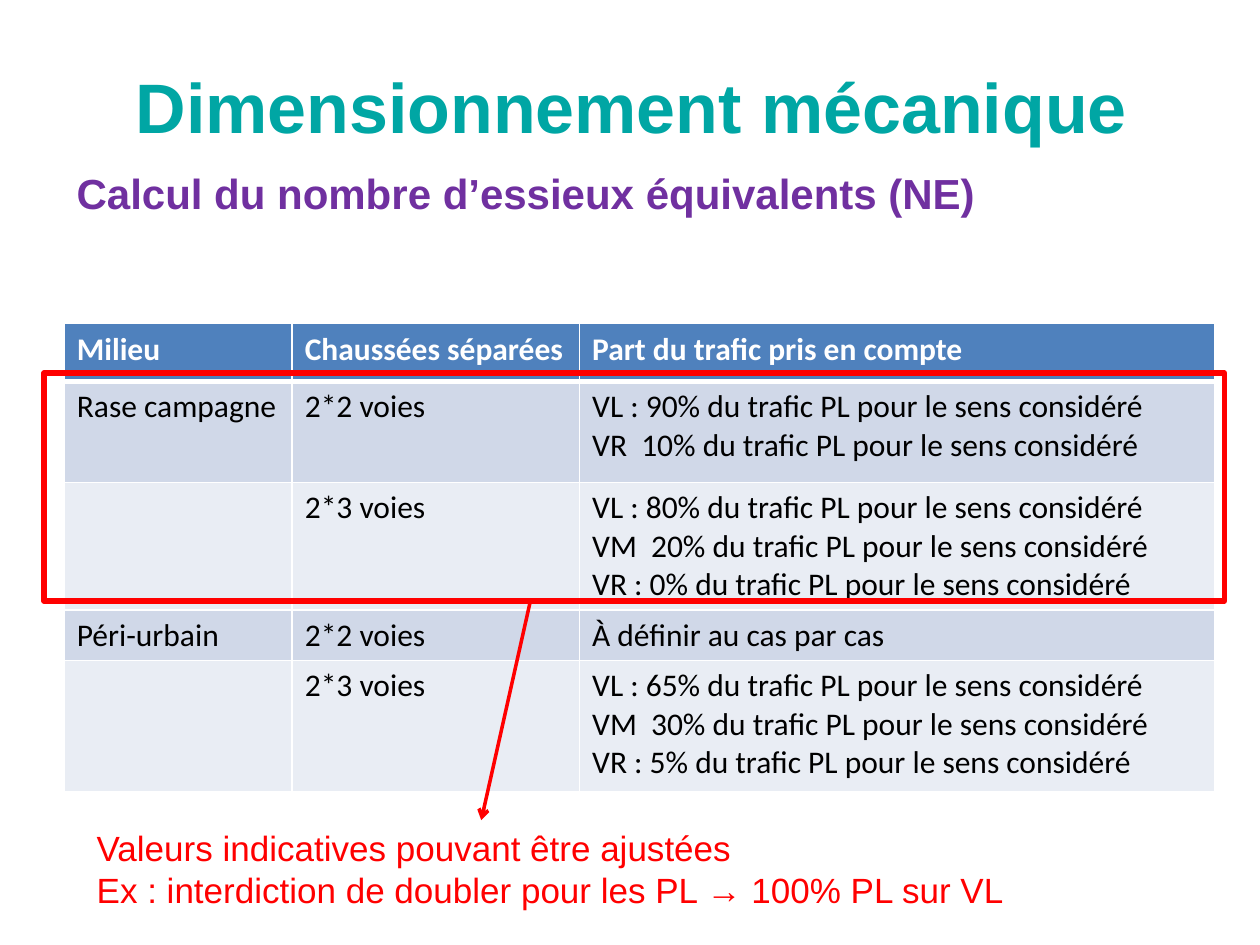
from lxml import etree
from pptx import Presentation
from pptx.dml.color import RGBColor
from pptx.enum.shapes import MSO_CONNECTOR, MSO_SHAPE
from pptx.enum.text import MSO_ANCHOR, PP_ALIGN
from pptx.oxml.ns import qn
from pptx.util import Pt

RECTANGLE = MSO_SHAPE.RECTANGLE
STRAIGHT = MSO_CONNECTOR.STRAIGHT
TOP, MIDDLE = MSO_ANCHOR.TOP, MSO_ANCHOR.MIDDLE
LEFT, CENTER = PP_ALIGN.LEFT, PP_ALIGN.CENTER

TEAL = RGBColor(0x00, 0xA6, 0xA4)
PURPLE = RGBColor(0x70, 0x30, 0xA0)
RED = RGBColor(0xFF, 0x00, 0x00)
BLACK = RGBColor(0x00, 0x00, 0x00)
WHITE = RGBColor(0xFF, 0xFF, 0xFF)
HEADER_BLUE = RGBColor(0x4F, 0x81, 0xBD)
BAND_FILLS = [RGBColor(0xD0, 0xD8, 0xE8), RGBColor(0xE9, 0xED, 0xF4)]

TITLE = ["Dimensionnement mécanique"]
SUBTITLE = ["Calcul du nombre d’essieux équivalents (NE)"]
NOTE = [
    "Valeurs indicatives pouvant être ajustées",
    "Ex : interdiction de doubler pour les PL → 100% PL sur VL",
]
ROWS = [
    ("Milieu", "Chaussées séparées", "Part du trafic pris en compte"),
    ("Rase campagne", "2*2 voies",
     "VL : 90% du trafic PL pour le sens considéré\n"
     "VR  10% du trafic PL pour le sens considéré"),
    ("", "2*3 voies",
     "VL : 80% du trafic PL pour le sens considéré\n"
     "VM  20% du trafic PL pour le sens considéré\n"
     "VR : 0% du trafic PL pour le sens considéré"),
    ("Péri-urbain", "2*2 voies", "À définir au cas par cas"),
    ("", "2*3 voies",
     "VL : 65% du trafic PL pour le sens considéré\n"
     "VM  30% du trafic PL pour le sens considéré\n"
     "VR : 5% du trafic PL pour le sens considéré"),
]
COLUMN_WIDTHS = [130.3, 164.2, 362.9]
ROW_HEIGHTS = [33, 57.6, 73, 28.8, 74.9]
TABLE_LEFT, TABLE_TOP = 36.7, 185
FRAME_BOX = (25.2, 213.1, 674.6, 130.3)
ARROW = (303.1, 343.4, 275, 468.7)


def style_font(font, name, size, color, bold=False):
    font.name = name
    font.size = Pt(size)
    font.color.rgb = color
    font.bold = bold


def add_text(slide, box, lines, size, color, bold=False, align=LEFT, anchor=TOP):
    frame = slide.shapes.add_textbox(*map(Pt, box)).text_frame
    frame.word_wrap = True
    frame.vertical_anchor = anchor
    frame.text = "\n".join(lines)
    for paragraph in frame.paragraphs:
        paragraph.alignment = align
        style_font(paragraph.font, "Arial", size, color, bold)
    return frame


def add_borders(cell, row_index):
    properties = cell._tc.get_or_add_tcPr()
    widths = {"lnL": 1, "lnR": 1,
              "lnT": 3 if row_index == 1 else 1,
              "lnB": 3 if row_index == 0 else 1}
    for side, width in widths.items():
        border = etree.SubElement(properties, qn(f"a:{side}"), w=str(Pt(width)))
        fill = etree.SubElement(border, qn("a:solidFill"))
        etree.SubElement(fill, qn("a:srgbClr"), val=str(WHITE))


def add_traffic_table(slide):
    table = slide.shapes.add_table(
        len(ROWS), len(COLUMN_WIDTHS), Pt(TABLE_LEFT), Pt(TABLE_TOP),
        Pt(sum(COLUMN_WIDTHS)), Pt(sum(ROW_HEIGHTS))).table
    for column, width in zip(table.columns, COLUMN_WIDTHS):
        column.width = Pt(width)
    for row_index, (row, height, texts) in enumerate(zip(table.rows, ROW_HEIGHTS, ROWS)):
        row.height = Pt(height)
        header = row_index == 0
        for cell, text in zip(row.cells, texts):
            add_borders(cell, row_index)
            cell.fill.solid()
            cell.fill.fore_color.rgb = HEADER_BLUE if header else BAND_FILLS[(row_index - 1) % 2]
            cell.text = text
            for paragraph in cell.text_frame.paragraphs:
                style_font(paragraph.font, "Calibri", 18, WHITE if header else BLACK, header)


def add_frame(slide):
    frame = slide.shapes.add_shape(RECTANGLE, *map(Pt, FRAME_BOX))
    frame.shadow.inherit = False
    frame.fill.background()
    frame.line.color.rgb = RED
    frame.line.width = Pt(3)


def add_arrow(slide):
    arrow = slide.shapes.add_connector(STRAIGHT, *map(Pt, ARROW))
    arrow.line.color.rgb = RED
    arrow.line.width = Pt(2)
    etree.SubElement(arrow.line._get_or_add_ln(), qn("a:tailEnd"), type="arrow")
    etree.SubElement(arrow._element.spPr, qn("a:effectLst"))


def main():
    presentation = Presentation()
    presentation.slide_width, presentation.slide_height = Pt(720), Pt(540)
    slide = presentation.slides.add_slide(presentation.slide_layouts[6])
    add_text(slide, (36.7, 15.1, 648, 90), TITLE, 40, TEAL, True, CENTER, MIDDLE)
    subtitle = add_text(slide, (36.7, 88.6, 648, 419.8), SUBTITLE, 24, PURPLE, True)
    subtitle.margin_top = Pt(7)
    add_traffic_table(slide)
    add_frame(slide)
    add_text(slide, (48.2, 468.7, 578.2, 55.4), NOTE, 20, RED)
    add_arrow(slide)
    presentation.save("out.pptx")


if __name__ == "__main__":
    main()
